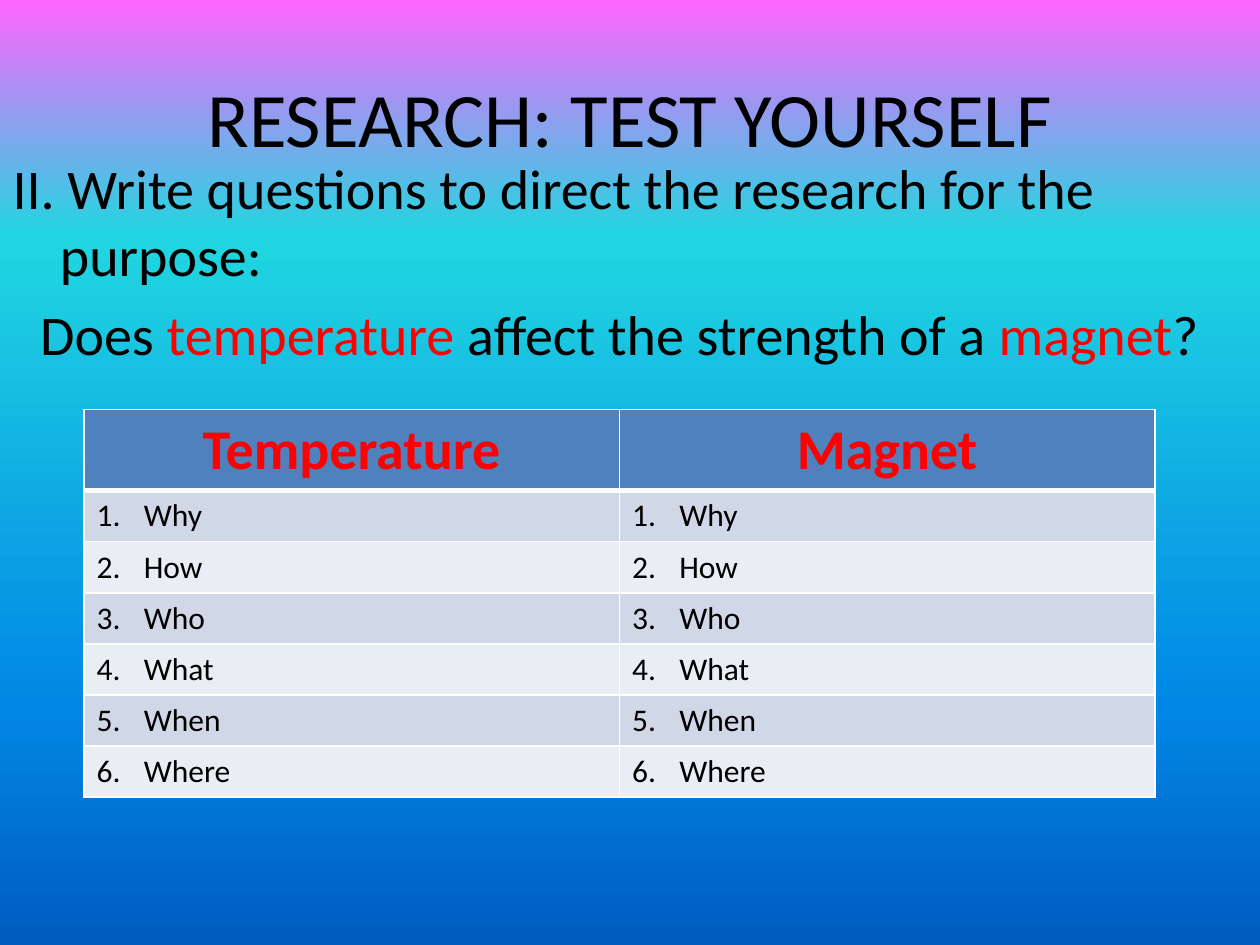
import pptx
import pptx.util
import pptx.dml.color
import pptx.enum.text
import pptx.oxml
import pptx.oxml.ns
import lxml.etree

Pt = pptx.util.Pt
qn = pptx.oxml.ns.qn
Align = pptx.enum.text.PP_ALIGN
Anchor = pptx.enum.text.MSO_ANCHOR

title = "RESEARCH: TEST YOURSELF"
lines = [
    (Align.LEFT, [("II. Write questions to direct the research for the purpose:", "ink")]),
    (Align.CENTER, [
        ("Does ", "ink"),
        ("temperature", "red"),
        (" affect the strength of a ", "ink"),
        ("magnet", "red"),
        ("?", "ink"),
    ]),
]
heads = ["Temperature", "Magnet"]
asks = ["Why", "How", "Who", "What", "When", "Where"]

theme = {
    "font": "Calibri",
    "ink": "000000", "red": "FF0000", "rule": "FFFFFF",
    "head": "4F81BD", "bands": ["D0D8E8", "E9EDF4"],
    "sky": [(0, "FF66FF"), (25, "21D6E0"), (75, "0087E6"), (100, "005CBF")],
    "big": 44, "mid": 32, "small": 18,
    "hang": 27, "thin": 1, "thick": 3,
}
boxes = {
    "title": (36, 21.6, 648, 90),
    "body": (0, 84.24, 707.76, 398.16),
    "table": (48, 234, 612, 204.4),
}


def tint(code):
    return pptx.dml.color.RGBColor.from_string(code)


def place(shape, box):
    shape.left, shape.top, shape.width, shape.height = map(Pt, box)


def add_run(para, text, size, color, bold=False):
    run = para.add_run()
    run.text = text
    font = run.font
    font.name, font.size, font.bold = theme["font"], Pt(size), bold
    font.color.rgb = tint(theme[color])


def add_node(root, tag, **attrs):
    node = lxml.etree.SubElement(root, qn(tag))
    for key, value in attrs.items():
        node.set(key, str(value))
    return node


def hang(para):
    props = para._p.get_or_add_pPr()
    props.set("marL", str(Pt(theme["hang"])))
    props.set("indent", str(-Pt(theme["hang"])))
    return props


def paint_sky(slide):
    fill = slide.background.fill
    fill.gradient()
    fill.gradient_angle = 270
    stops = next(slide.element.iter(qn("a:gsLst")))
    for stop in list(stops):
        stops.remove(stop)
    for spot, code in theme["sky"]:
        stop = add_node(stops, "a:gs", pos=spot * 1000)
        add_node(stop, "a:srgbClr", val=code)


def style_cell(cell, color, base):
    props = cell._tc.get_or_add_tcPr()
    for side in "LRTB":
        width = base if side == "B" else theme["thin"]
        line = add_node(props, "a:ln" + side, w=Pt(width))
        fill = add_node(line, "a:solidFill")
        add_node(fill, "a:srgbClr", val=theme["rule"])
    cell.fill.solid()
    cell.fill.fore_color.rgb = tint(color)


def add_grid(slide):
    left, top, width, height = boxes["table"]
    count = len(asks) + 1
    grid = slide.shapes.add_table(
        count, len(heads), Pt(left), Pt(top), Pt(width), Pt(height)).table
    for row in grid.rows:
        row.height = Pt(height / count)
    for col, head in enumerate(heads):
        grid.columns[col].width = Pt(width / len(heads))
        cell = grid.cell(0, col)
        style_cell(cell, theme["head"], theme["thick"])
        para = cell.text_frame.paragraphs[0]
        para.alignment = Align.CENTER
        add_run(para, head, theme["mid"], "red", True)
        for num, ask in enumerate(asks, 1):
            cell = grid.cell(num, col)
            style_cell(cell, theme["bands"][(num - 1) % 2], theme["thin"])
            para = cell.text_frame.paragraphs[0]
            props = hang(para)
            add_node(props, "a:buFont", typeface="+mj-lt")
            add_node(props, "a:buAutoNum", type="arabicPeriod", startAt=num)
            add_run(para, ask, theme["small"], "ink")


def main():
    deck = pptx.Presentation()
    deck.slide_width, deck.slide_height = Pt(720), Pt(540)
    slide = deck.slides.add_slide(deck.slide_layouts[1])
    paint_sky(slide)

    top = slide.shapes.title
    place(top, boxes["title"])
    top.text_frame.vertical_anchor = Anchor.MIDDLE
    para = top.text_frame.paragraphs[0]
    para.alignment = Align.CENTER
    add_run(para, title, theme["big"], "ink")

    body = slide.placeholders[1]
    place(body, boxes["body"])
    frame = body.text_frame
    for pos, (align, runs) in enumerate(lines):
        para = frame.add_paragraph() if pos else frame.paragraphs[0]
        para.alignment = align
        add_node(hang(para), "a:buNone")
        for text, color in runs:
            add_run(para, text, theme["mid"], color)

    add_grid(slide)
    deck.save("out.pptx")


if __name__ == "__main__":
    main()
